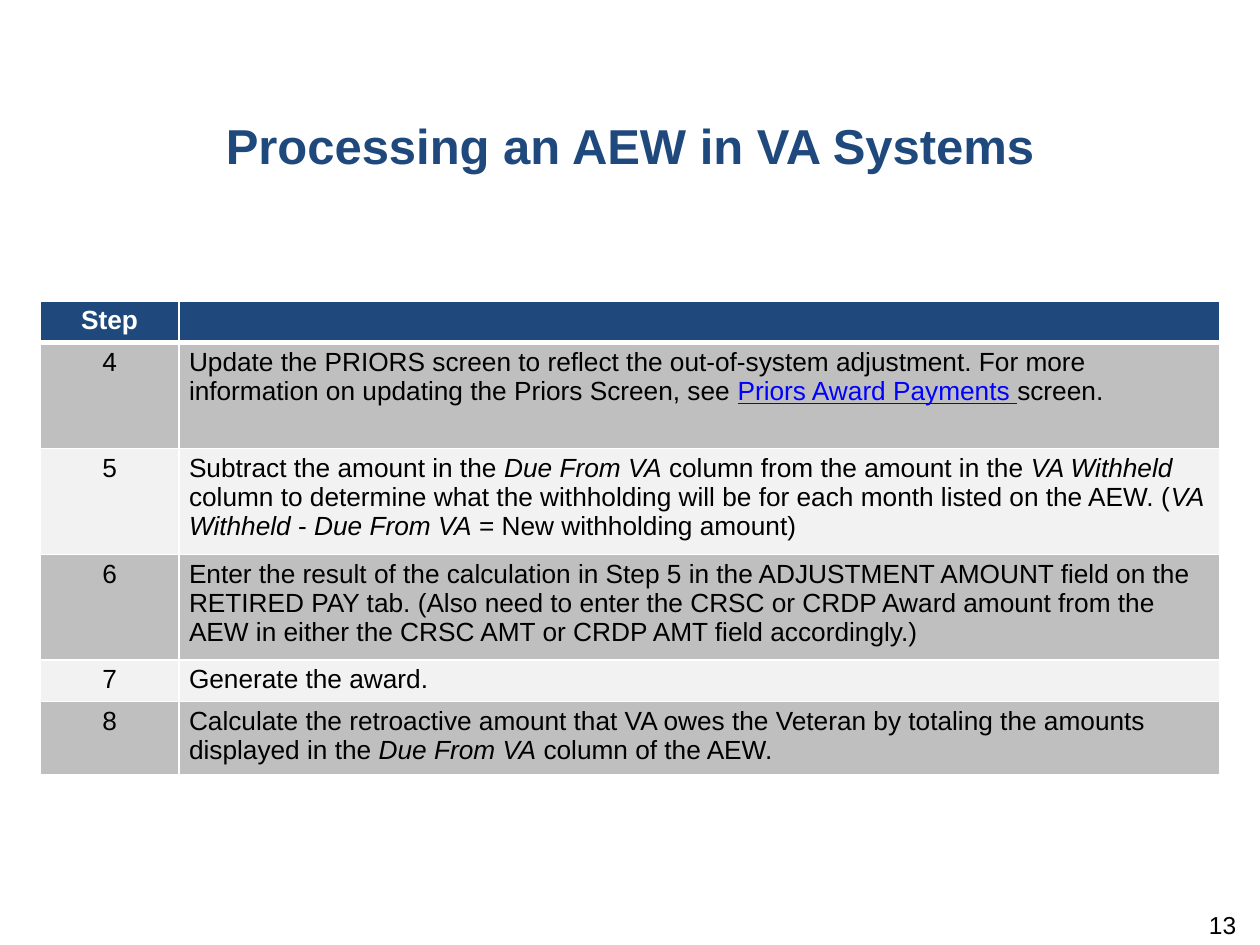
from dataclasses import dataclass

from lxml import etree
from pptx import Presentation
from pptx import util as u
from pptx.dml.color import RGBColor
from pptx.enum import text
from pptx.oxml.ns import qn


@dataclass(frozen=True)
class Theme:
    font: str = "Arial"
    navy: str = "1F497D"
    white: str = "FFFFFF"
    black: str = "000000"
    link: str = "0000FF"
    dark_band: str = "BFBFBF"
    light_band: str = "F2F2F2"
    title_size: int = 28
    table_size: int = 15
    number_size: int = 14


ALIGN = text.PP_ALIGN
PLAIN, ITALIC, LINK = "plain", "italic", "link"

# Step number and the runs of its instruction
STEPS = [
    ("4", [("Update the PRIORS screen to reflect the out-of-system adjustment. "
            "For more information on updating the Priors Screen, see ", PLAIN),
           ("Priors Award Payments ", LINK), ("screen.", PLAIN)]),
    ("5", [("Subtract the amount in the ", PLAIN), ("Due From VA", ITALIC),
           (" column from the amount in the ", PLAIN), ("VA Withheld", ITALIC),
           (" column to determine what the withholding will be for each month "
            "listed on the AEW. (", PLAIN),
           ("VA Withheld ", ITALIC), ("- ", PLAIN), ("Due From VA", ITALIC),
           (" = New withholding amount)", PLAIN)]),
    ("6", [("Enter the result of the calculation in Step 5 in the ADJUSTMENT "
            "AMOUNT field on the RETIRED PAY tab. (Also need to enter the CRSC "
            "or CRDP Award amount from the AEW in either the CRSC AMT or CRDP "
            "AMT field accordingly.)", PLAIN)]),
    ("7", [("Generate the award.", PLAIN)]),
    ("8", [("Calculate the retroactive amount that VA owes the Veteran by "
            "totaling the amounts displayed in the ", PLAIN),
           ("Due From VA", ITALIC), (" column of the AEW.", PLAIN)]),
]
COLUMN_WIDTHS = [1.1, 8.26]
ROW_HEIGHTS = [0.33, 0.84, 0.84, 0.84, 0.33, 0.58]


class SlideBuilder:
    def __init__(self, slide, theme):
        self.slide = slide
        self.theme = theme

    def add_run(self, paragraph, wording, size, color, bold=False, style=PLAIN):
        run = paragraph.add_run()
        run.text = wording
        font = run.font
        font.name, font.size = self.theme.font, u.Pt(size)
        font.bold, font.italic = bold, style == ITALIC
        font.underline = style == LINK
        font.color.rgb = RGBColor.from_string(
            self.theme.link if style == LINK else color)

    def place(self, shape, left, top, width, height):
        shape.left, shape.top = u.Inches(left), u.Inches(top)
        shape.width, shape.height = u.Inches(width), u.Inches(height)

    def title(self, wording, *box):
        shape = self.slide.shapes.title
        self.place(shape, *box)
        frame = shape.text_frame
        frame.auto_size = text.MSO_AUTO_SIZE.NONE
        frame.vertical_anchor = text.MSO_ANCHOR.TOP
        paragraph = frame.paragraphs[0]
        paragraph.alignment = ALIGN.CENTER
        paragraph.space_after = u.Pt(6)
        self.add_run(paragraph, wording, self.theme.title_size,
                     self.theme.navy, bold=True)

    def page_number(self, wording, *box):
        shape = self.slide.shapes.add_textbox(*map(u.Inches, box))
        frame = shape.text_frame
        frame.word_wrap = True
        frame.margin_top = 0
        paragraph = frame.paragraphs[0]
        paragraph.alignment = ALIGN.RIGHT
        paragraph.space_after = u.Pt(6)
        self.add_run(paragraph, wording, self.theme.number_size,
                     self.theme.black)

    def borders(self, cell, top, bottom):
        properties = cell._tc.get_or_add_tcPr()
        widths = {"a:lnL": 1, "a:lnR": 1, "a:lnT": top, "a:lnB": bottom}
        for position, (tag, width) in enumerate(widths.items()):
            line = etree.Element(qn(tag), w=str(u.Pt(width)))
            fill = etree.SubElement(line, qn("a:solidFill"))
            etree.SubElement(fill, qn("a:srgbClr"), val=self.theme.white)
            properties.insert(position, line)

    def cell(self, cell, runs, fill, color, alignment, bold=False):
        cell.fill.solid()
        cell.fill.fore_color.rgb = RGBColor.from_string(fill)
        cell.margin_left = cell.margin_right = u.Inches(0.08)
        cell.margin_top = cell.margin_bottom = u.Inches(0.04)
        paragraph = cell.text_frame.paragraphs[0]
        paragraph.alignment = alignment
        for wording, style in runs:
            self.add_run(paragraph, wording, self.theme.table_size, color,
                         bold, style)
        if not runs:  # keep an empty cell at the table's type size
            etree.SubElement(paragraph._p, qn("a:endParaRPr"),
                             sz=str(self.theme.table_size * 100))

    def steps_table(self, left, top):
        theme = self.theme
        rows = [("Step", [])] + STEPS
        table = self.slide.shapes.add_table(
            len(rows), len(COLUMN_WIDTHS), u.Inches(left), u.Inches(top),
            u.Inches(sum(COLUMN_WIDTHS)), u.Inches(sum(ROW_HEIGHTS))).table
        for column, width in zip(table.columns, COLUMN_WIDTHS):
            column.width = u.Inches(width)
        for index, (step, instruction) in enumerate(rows):
            table.rows[index].height = u.Inches(ROW_HEIGHTS[index])
            header = index == 0
            band = theme.dark_band if index % 2 else theme.light_band
            fill = theme.navy if header else band
            color = theme.white if header else theme.black
            contents = [([(step, PLAIN)], ALIGN.CENTER),
                        (instruction, ALIGN.LEFT)]
            for column, (runs, alignment) in enumerate(contents):
                cell = table.cell(index, column)
                self.cell(cell, runs, fill, color, alignment, bold=header)
                self.borders(cell, top=3 if index == 1 else 1,
                             bottom=3 if header else 1)


def main():
    presentation = Presentation()
    presentation.slide_width = u.Inches(10)
    presentation.slide_height = u.Inches(7.5)
    slide = presentation.slides.add_slide(presentation.slide_layouts[5])
    builder = SlideBuilder(slide, Theme())

    builder.title("Processing an AEW in VA Systems", 0, 0.87, 10, 1.19)
    builder.page_number("13", 7.58, 7.22, 2.33, 0.4)
    builder.steps_table(0.32, 2.39)

    presentation.save("out.pptx")


if __name__ == "__main__":
    main()
